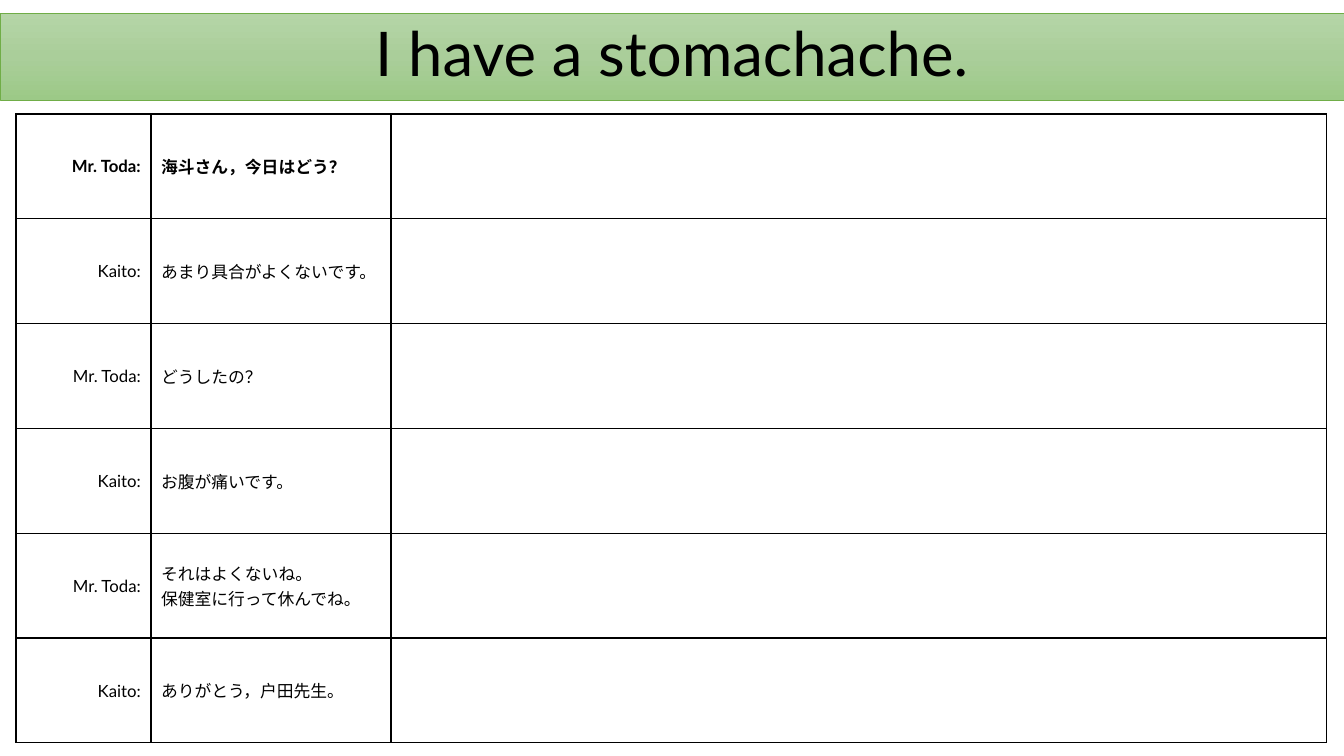
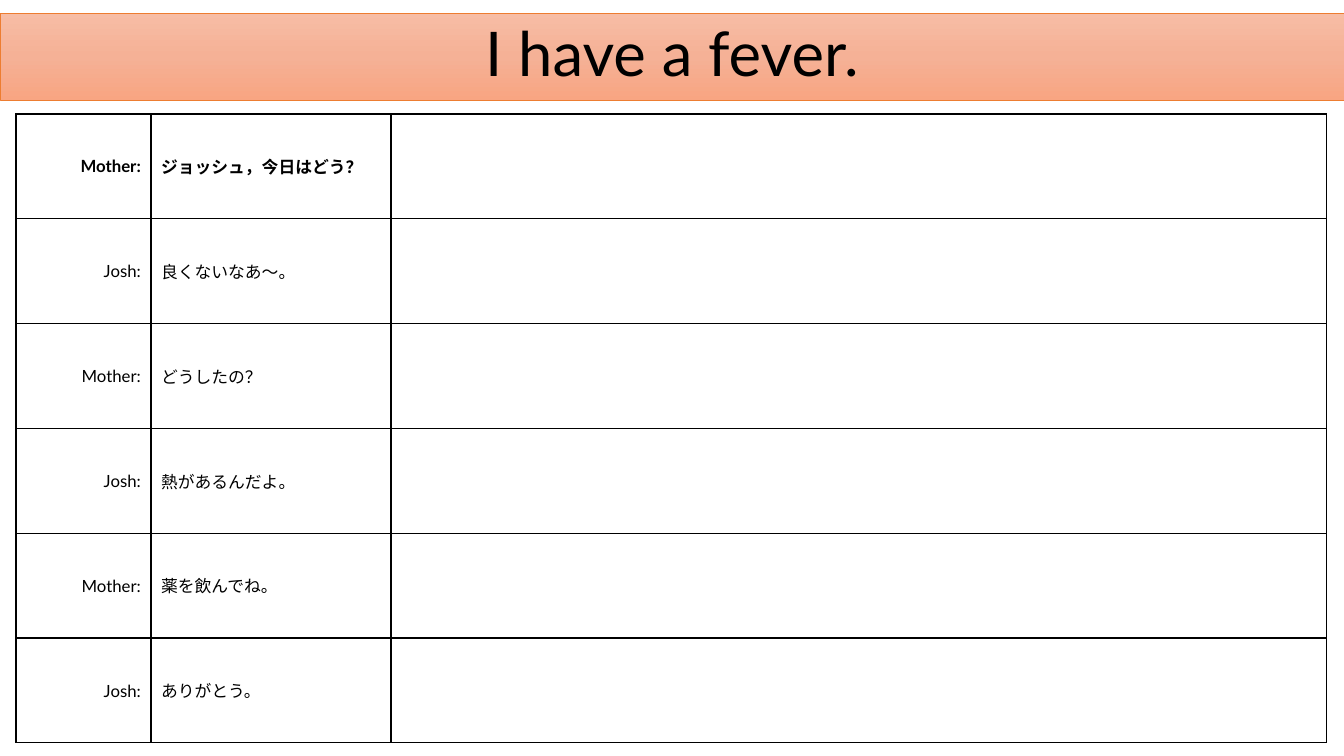
from copy import deepcopy

from pptx import Presentation
from pptx import util as u
from pptx.dml.color import RGBColor
from pptx.enum import shapes, text
from pptx.oxml.ns import qn
from pptx.oxml.xmlchemy import OxmlElement

EMU_PER_PX = 914400 / 100.8
SLIDE_WIDTH, SLIDE_HEIGHT = 1344, 756
BAND_BOX = (0, 13, SLIDE_WIDTH, 87)
TABLE_BOX = (16, 114, 1311, 629)
NAME_WIDTH, PHRASE_WIDTH = 135, 240

LATIN_FONT = "Lato"
JAPANESE_FONT = "Noto Sans CJK JP"
BLACK = RGBColor(0x00, 0x00, 0x00)
GREEN = RGBColor(0x70, 0xAD, 0x47)
GREEN_STOPS = (RGBColor(0xB5, 0xD5, 0xA7), RGBColor(0xAA, 0xCE, 0x9A),
               RGBColor(0x9C, 0xC9, 0x87))
ORANGE = RGBColor(0xED, 0x7D, 0x31)
ORANGE_STOPS = (RGBColor(0xF7, 0xBD, 0xA5), RGBColor(0xF5, 0xB1, 0x96),
                RGBColor(0xF8, 0xA5, 0x82))

DIALOGUES = [
    ("I have a stomachache.", GREEN, GREEN_STOPS, ("Mr. Toda:", "Kaito:"), [
        "海斗さん，今日はどう？",
        "あまり具合がよくないです。",
        "どうしたの？",
        "お腹が痛いです。",
        "それはよくないね。\n保健室に行って休んでね。",
        "ありがとう，戸田先生。",
    ]),
    ("I have a fever.", ORANGE, ORANGE_STOPS, ("Mother:", "Josh:"), [
        "ジョッシュ，今日はどう？",
        "良くないなあ～。",
        "どうしたの？",
        "熱があるんだよ。",
        "薬を飲んでね。",
        "ありがとう。",
    ]),
]


def px(length):
    return u.Emu(round(length * EMU_PER_PX))


def write(frame, content, size=12, font=LATIN_FONT, bold=False,
          align=text.PP_ALIGN.LEFT, spacing=None):
    """Fill a text frame with one paragraph per line of content."""
    frame.text = content
    for paragraph in frame.paragraphs:
        paragraph.alignment = align
        paragraph.line_spacing = spacing
        for run in paragraph.runs:
            run.font.size = u.Pt(size)
            run.font.name = font
            run.font.bold = bold
            run.font.color.rgb = BLACK
            east_asian = OxmlElement("a:ea")
            east_asian.set("typeface", font)
            run.font._element.append(east_asian)


def fill_gradient(shape, colors):
    """Shade a shape downwards through three evenly spaced colours."""
    shape.fill.gradient()
    shape.fill.gradient_angle = 270
    stop_list = shape._element.spPr.find(".//" + qn("a:gsLst"))
    stop_list.insert(1, deepcopy(stop_list[0]))
    for index, (stop, color) in enumerate(zip(shape.fill.gradient_stops, colors)):
        stop.position = index / 2
        stop.color.rgb = color


def add_title_band(slide, box, title, line_color, gradient_colors):
    band = slide.shapes.add_shape(shapes.MSO_SHAPE.RECTANGLE, *map(px, box))
    band.shadow.inherit = False
    fill_gradient(band, gradient_colors)
    band.line.color.rgb = line_color
    band.line.width = u.Pt(0.5)
    frame = band.text_frame
    frame.word_wrap = True
    frame.vertical_anchor = text.MSO_ANCHOR.MIDDLE
    write(frame, title, size=44, align=text.PP_ALIGN.CENTER, spacing=0.9)


def style_cell(cell):
    """Give a cell black borders, no fill and middle anchoring."""
    cell.vertical_anchor = text.MSO_ANCHOR.MIDDLE
    properties = cell._tc.get_or_add_tcPr()
    for side in ("a:lnL", "a:lnR", "a:lnT", "a:lnB"):
        border = OxmlElement(side)
        border.set("w", str(u.Pt(1)))
        solid = OxmlElement("a:solidFill")
        color = OxmlElement("a:srgbClr")
        color.set("val", str(BLACK))
        solid.append(color)
        border.append(solid)
        properties.append(border)
    cell.fill.background()


def add_dialogue_table(slide, box, speakers, phrases):
    """Add rows of speaker, Japanese phrase and a blank space for the answer."""
    width, height = box[2:]
    table = slide.shapes.add_table(len(phrases), 3, *map(px, box)).table
    table.first_row = table.horz_banding = False
    widths = (NAME_WIDTH, PHRASE_WIDTH, width - NAME_WIDTH - PHRASE_WIDTH)
    for column, column_width in zip(table.columns, widths):
        column.width = px(column_width)
    for index, phrase in enumerate(phrases):
        row = table.rows[index]
        row.height = px(height / len(phrases))
        for cell in row.cells:
            style_cell(cell)
        bold = index == 0
        write(row.cells[0].text_frame, speakers[index % 2], bold=bold,
              align=text.PP_ALIGN.RIGHT)
        write(row.cells[1].text_frame, phrase, font=JAPANESE_FONT, bold=bold)


def add_dialogue_slide(presentation, title, line_color, gradient_colors,
                       speakers, phrases):
    slide = presentation.slides.add_slide(presentation.slide_layouts[6])
    add_title_band(slide, BAND_BOX, title, line_color, gradient_colors)
    add_dialogue_table(slide, TABLE_BOX, speakers, phrases)


def main():
    presentation = Presentation()
    presentation.slide_width = px(SLIDE_WIDTH)
    presentation.slide_height = px(SLIDE_HEIGHT)
    for dialogue in DIALOGUES:
        add_dialogue_slide(presentation, *dialogue)
    presentation.save("out.pptx")


if __name__ == "__main__":
    main()
